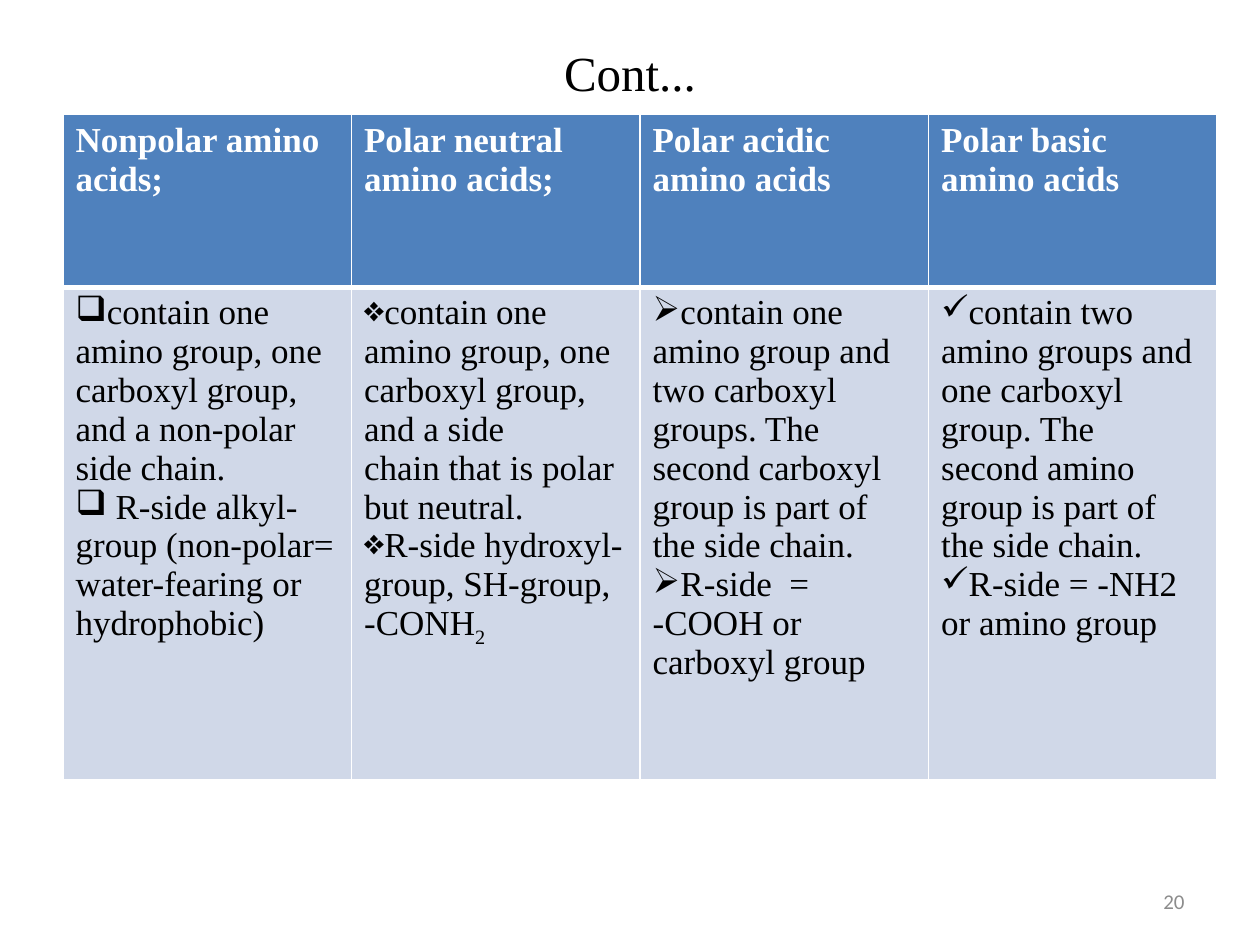
from dataclasses import dataclass

from lxml import etree
from pptx import Presentation
from pptx.dml.color import RGBColor
from pptx.enum.text import MSO_ANCHOR, PP_ALIGN
from pptx.oxml.ns import qn
from pptx.util import Inches, Pt

CENTER, RIGHT = PP_ALIGN.CENTER, PP_ALIGN.RIGHT
MIDDLE = MSO_ANCHOR.MIDDLE
WIDE, HIGH = 10, 7.5
EDGE = 0.5
ROWS = (1.37, 3.91)
COL = 2.29


@dataclass(frozen=True)
class Theme:
    serif: str = "Times New Roman"
    sans: str = "Calibri"
    ink: str = "000000"
    white: str = "FFFFFF"
    gray: str = "8C8C8C"
    head: str = "4F81BD"
    body: str = "D0D8E8"
    title: int = 28
    text: int = 20
    small: int = 12


LOOK = Theme()

# Heading, bullet sign, list items; an item may end in a subscript.
GROUPS = (
    ("Nonpolar amino acids;", "❑", (
        ("contain one amino group, one carboxyl group, and a non-polar\n"
         "side chain.", ""),
        (" R-side alkyl-group (non-polar= water-fearing or hydrophobic)", ""))),
    ("Polar neutral amino acids;", "❖", (
        ("contain one amino group, one carboxyl group, and a side\n"
         "chain that is polar but neutral.", ""),
        ("R-side hydroxyl-group, SH-group, -CONH", "2"))),
    ("Polar acidic amino acids", "➢", (
        ("contain one amino group and two carboxyl groups. The\n"
         "second carboxyl group is part of the side chain.", ""),
        ("R-side  = -COOH or carboxyl group", ""))),
    ("Polar basic amino acids", "✓", (
        ("contain two amino groups and one carboxyl group. The\n"
         "second amino group is part of the side chain.", ""),
        ("R-side = -NH2 or amino group", ""))),
)


def style(para, size, color, face=LOOK.serif, bold=False):
    form = {"name": face, "size": Pt(size), "bold": bold}
    for run in para.runs:
        for key, value in form.items():
            setattr(run.font, key, value)
        run.font.color.rgb = RGBColor.from_string(color)


def bullet(para, sign):
    props = para._p.get_or_add_pPr()
    props.set("marL", "0")
    props.set("indent", "0")
    etree.SubElement(props, qn("a:buChar")).set("char", sign)


def border(cell, base):
    """Draw white cell borders; base is the bottom width in points."""
    props = cell._tc.get_or_add_tcPr()
    for side, width in (("L", 1), ("R", 1), ("T", 1), ("B", base)):
        line = etree.SubElement(props, qn(f"a:ln{side}"), w=str(Pt(width)))
        fill = etree.SubElement(line, qn("a:solidFill"))
        etree.SubElement(fill, qn("a:srgbClr"), val=LOOK.white)


def paint(cell, color, base=1):
    border(cell, base)
    cell.fill.solid()
    cell.fill.fore_color.rgb = RGBColor.from_string(color)


def fill_list(cell, sign, items):
    frame = cell.text_frame
    for i, (text, sub) in enumerate(items):
        para = frame.add_paragraph() if i else frame.paragraphs[0]
        para.text = text
        bullet(para, sign)
        if sub:
            para.add_run().text = sub
        style(para, LOOK.text, LOOK.ink)
        if sub:
            para.runs[-1].font._element.set("baseline", "-25000")


def add_title(slide, text):
    title = slide.shapes.title
    place = {"left": EDGE, "top": 0.3, "width": WIDE - 2 * EDGE, "height": 0.54}
    for key, value in place.items():
        setattr(title, key, Inches(value))
    title.text_frame.text = text
    title.text_frame.vertical_anchor = MIDDLE
    para = title.text_frame.paragraphs[0]
    para.alignment = CENTER
    style(para, LOOK.title, LOOK.ink)


def add_grid(slide):
    count = len(GROUPS)
    box = [Inches(n) for n in (EDGE, 0.91, COL * count, sum(ROWS))]
    table = slide.shapes.add_table(len(ROWS), count, *box).table
    for row, high in zip(table.rows, ROWS):
        row.height = Inches(high)
    for i, (name, sign, items) in enumerate(GROUPS):
        table.columns[i].width = Inches(COL)
        head, body = table.cell(0, i), table.cell(1, i)
        paint(head, LOOK.head, base=3)
        paint(body, LOOK.body)
        head.text = name
        style(head.text_frame.paragraphs[0], LOOK.text, LOOK.white, bold=True)
        fill_list(body, sign, items)


def add_number(slide, text):
    wide = 2.33
    box = [Inches(n) for n in (WIDE - EDGE - wide, 6.95, wide, 0.4)]
    frame = slide.shapes.add_textbox(*box).text_frame
    frame.word_wrap = True
    frame.vertical_anchor = MIDDLE
    para = frame.paragraphs[0]
    para.text = text
    para.alignment = RIGHT
    style(para, LOOK.small, LOOK.gray, LOOK.sans)


def main():
    deck = Presentation()
    deck.slide_width, deck.slide_height = Inches(WIDE), Inches(HIGH)
    slide = deck.slides.add_slide(deck.slide_layouts[5])
    add_title(slide, "Cont...")
    add_grid(slide)
    add_number(slide, "20")
    deck.save("out.pptx")


if __name__ == "__main__":
    main()
